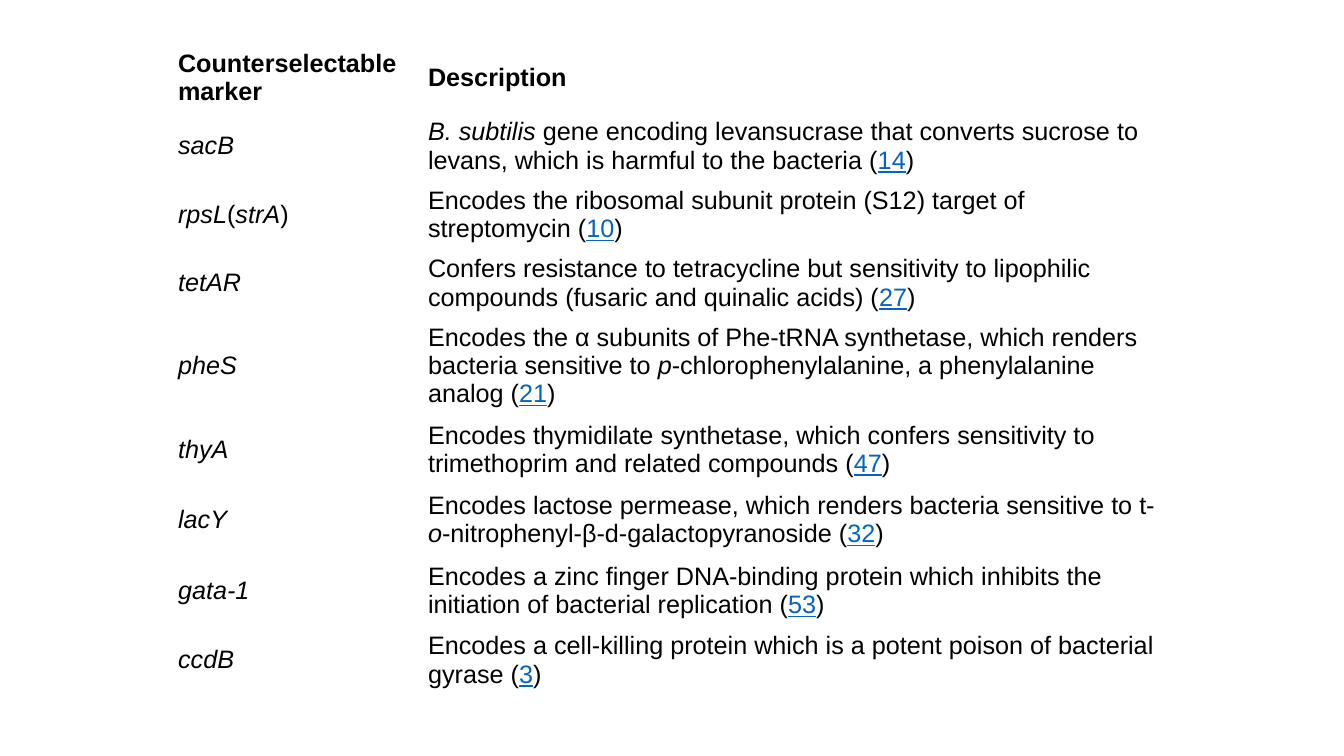
"""Builds the slide that lists counterselectable markers and what each does."""
from pptx import Presentation
from pptx import util as u
from pptx.dml.color import RGBColor
from pptx.enum import text

BLACK = RGBColor(0x00, 0x00, 0x00)
BLUE = RGBColor(0x05, 0x63, 0xC1)

HEADS = ["Counterselectable marker", "Description"]
GENES = [
    ([("sacB", "i")],
     [("B. subtilis", "i"),
      (" gene encoding levansucrase that converts sucrose to levans, "
       "which is harmful to the bacteria", "")], "14", 0.68),
    ([("rpsL", "i"), ("(", ""), ("strA", "i"), (")", "")],
     [("Encodes the ribosomal subunit protein (S12) target of streptomycin", "")],
     "10", 0.68),
    ([("tetAR", "i")],
     [("Confers resistance to tetracycline but sensitivity to lipophilic "
       "compounds (fusaric and quinalic acids)", "")], "27", 0.68),
    ([("pheS", "i")],
     [("Encodes the α subunits of Phe-tRNA synthetase, which renders bacteria "
       "sensitive to ", ""), ("p", "i"),
      ("-chlorophenylalanine, a phenylalanine analog", "")], "21", 0.96),
    ([("thyA", "i")],
     [("Encodes thymidilate synthetase, which confers sensitivity to "
       "trimethoprim and related compounds", "")], "47", 0.7),
    ([("lacY", "i")],
     [("Encodes lactose permease, which renders bacteria sensitive to t-", ""),
      ("o", "i"), ("-nitrophenyl-β-d-galactopyranoside", "")], "32", 0.7),
    ([("gata-1", "i")],
     [("Encodes a zinc finger DNA-binding protein which inhibits the "
       "initiation of bacterial replication", "")], "53", 0.7),
    ([("ccdB", "i")],
     [("Encodes a cell-killing protein which is a potent poison of "
       "bacterial gyrase", "")], "3", 0.68),
]


class Deck:
    font = "Arial"
    size = u.Pt(18)
    pad = u.Inches(0.03)

    def __init__(self, wide, high):
        self.prs = Presentation()
        self.prs.slide_width = u.Inches(wide)
        self.prs.slide_height = u.Inches(high)
        self.slide = self.prs.slides.add_slide(self.prs.slide_layouts[6])

    def table(self, left, top, cols, rows):
        """Adds a plain table; left, top and cols are shares, rows are inches."""
        wide, high = self.prs.slide_width, self.prs.slide_height
        frame = self.slide.shapes.add_table(
            len(rows), len(cols), int(left * wide), int(top * high),
            int(sum(cols) * wide), u.Inches(sum(rows)))
        grid = frame.table
        grid.horz_banding = False
        grid.first_row = False
        for col, share in zip(grid.columns, cols):
            col.width = int(share * wide)
        for row, tall in zip(grid.rows, rows):
            row.height = u.Inches(tall)
        return grid

    def cell(self, cell, runs):
        cell.fill.background()
        cell.vertical_anchor = text.MSO_ANCHOR.MIDDLE
        cell.margin_top = cell.margin_bottom = self.pad
        para = cell.text_frame.paragraphs[0]
        for words, kind in runs:
            self.run(para, words, kind)

    def run(self, para, words, kind):
        """Adds one run; kind is b (bold), i (italic), u (cited) or empty."""
        run = para.add_run()
        run.text = words
        font = run.font
        font.name, font.size = self.font, self.size
        font.bold = kind == "b"
        font.italic = kind == "i"
        font.underline = kind == "u"
        font.color.rgb = BLUE if kind == "u" else BLACK


def main():
    deck = Deck(13.33, 7.5)
    rows = [0.67] + [tall for *_, tall in GENES]
    grid = deck.table(1 / 8, 0.44 / 7.5, [0.186, 0.558], rows)
    for col, head in enumerate(HEADS):
        deck.cell(grid.cell(0, col), [(head, "b")])
    for row, (gene, about, cite, _) in enumerate(GENES, 1):
        deck.cell(grid.cell(row, 0), gene)
        *start, (last, kind) = about
        deck.cell(grid.cell(row, 1),
                  start + [(last + " (", kind), (cite, "u"), (")", "")])
    deck.prs.save("out.pptx")


if __name__ == "__main__":
    main()
